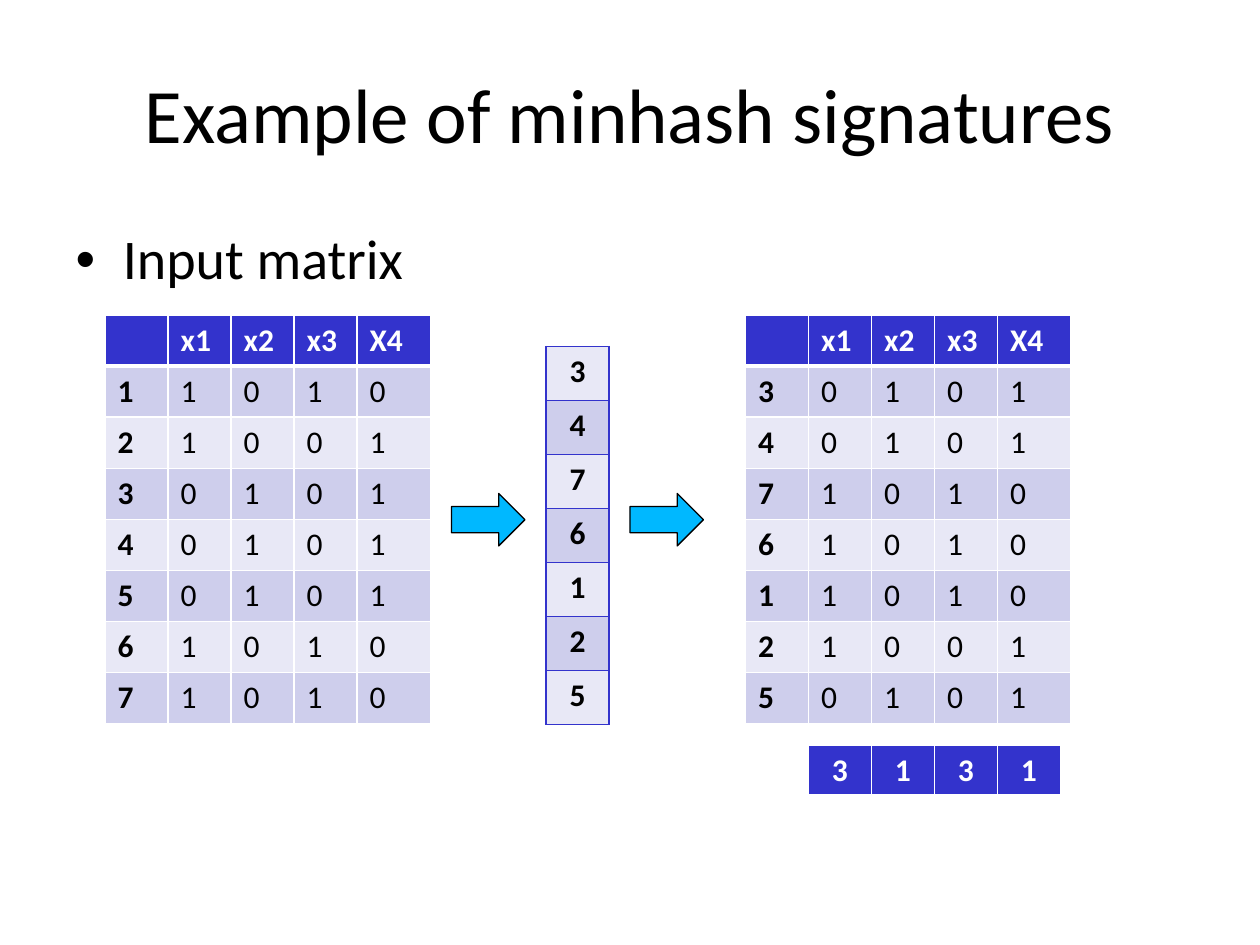
from dataclasses import dataclass

from lxml import etree
from pptx import Presentation
from pptx.dml.color import RGBColor as Rgb
from pptx.enum import shapes, text
from pptx.oxml import ns
from pptx.util import Pt


@dataclass(frozen=True)
class Theme:
    font: str = "Calibri"
    title: int = 44
    body: int = 32
    cell: int = 18
    black: str = "000000"
    white: str = "FFFFFF"
    head: str = "3333CC"
    dark: str = "CECEEC"
    light: str = "E8E8F6"
    arrow: str = "00B8FF"


THEME = Theme()
NAMES = ["x1", "x2", "x3", "X4"]
MATRIX = {
    1: (1, 0, 1, 0),
    2: (1, 0, 0, 1),
    3: (0, 1, 0, 1),
    4: (0, 1, 0, 1),
    5: (0, 1, 0, 1),
    6: (1, 0, 1, 0),
    7: (1, 0, 1, 0),
}
ORDER = [3, 4, 7, 6, 1, 2, 5]
COL, LAST, ROW = 36, 42, 29.2


def style(para, size, color=THEME.black, bold=False, align=None):
    para.alignment = align
    for run in para.runs:
        font = run.font
        font.name, font.size, font.bold = THEME.font, Pt(size), bold
        font.color.rgb = Rgb.from_string(color)


def place(item, box):
    item.left, item.top, item.width, item.height = map(Pt, box)


def add_text(holder, box, words, size, align):
    place(holder, box)
    frame = holder.text_frame
    frame.text = words
    para = frame.paragraphs[0]
    para.line_spacing = 0.98
    style(para, size, align=align)
    return para


def edge(cell, side, color, width):
    line = etree.SubElement(cell._tc.get_or_add_tcPr(), ns.qn(f"a:ln{side}"),
                            w=str(Pt(width)))
    fill = etree.SubElement(line, ns.qn("a:solidFill"))
    etree.SubElement(fill, ns.qn("a:srgbClr"), val=color)


def paint(cell, value, fill, color, bold, align, rule, top=1, base=1):
    """Fill one cell and draw its four edges."""
    for side, width in zip("LRTB", (1, 1, top, base)):
        edge(cell, side, rule, width)
    cell.fill.solid()
    cell.fill.fore_color.rgb = Rgb.from_string(fill)
    cell.text_frame.text = str(value)
    style(cell.text_frame.paragraphs[0], THEME.cell, color, bold, align)


def add_grid(slide, box, rows, cols):
    grid = slide.shapes.add_table(rows, len(cols), *map(Pt, box)).table
    grid.first_row = grid.horz_banding = False
    for col, width in zip(grid.columns, cols):
        col.width = Pt(width)
    for row in grid.rows:
        row.height = Pt(box[3] / rows)
    return grid


def add_matrix(slide, left, top, order):
    """Header row, then the matrix rows in the given order."""
    rows = [["", *NAMES]] + [[key, *MATRIX[key]] for key in order]
    cols = [COL] * len(NAMES) + [LAST]
    grid = add_grid(slide, (left, top, sum(cols), ROW * len(rows)),
                    len(rows), cols)
    for r, row in enumerate(rows):
        head = r == 0
        fill = THEME.head if head else (THEME.light, THEME.dark)[r % 2]
        for c, value in enumerate(row):
            paint(grid.cell(r, c), value, fill,
                  THEME.white if head else THEME.black, head or c == 0,
                  None, THEME.white, 3 if r == 1 else 1, 3 if head else 1)


def add_order(slide, box):
    """One column that shows the row permutation."""
    grid = add_grid(slide, box, len(ORDER), [box[2]])
    for r, key in enumerate(ORDER):
        paint(grid.cell(r, 0), key, (THEME.light, THEME.dark)[r % 2],
              THEME.black, True, text.PP_ALIGN.CENTER, THEME.head)


def add_marks(slide, left, top):
    """Signature: position of the first 1 in each permuted column."""
    count = len(NAMES)
    grid = add_grid(slide, (left, top, COL * count, ROW), 1, [COL] * count)
    for c in range(count):
        first = [MATRIX[key][c] for key in ORDER].index(1) + 1
        paint(grid.cell(0, c), first, THEME.head, THEME.white, True,
              text.PP_ALIGN.CENTER, THEME.white, base=3)


def add_arrow(slide, box):
    arrow = slide.shapes.add_shape(shapes.MSO_SHAPE.RIGHT_ARROW, *map(Pt, box))
    arrow.shadow.inherit = False
    arrow.fill.solid()
    arrow.fill.fore_color.rgb = Rgb.from_string(THEME.arrow)
    arrow.line.color.rgb = Rgb.from_string(THEME.black)
    arrow.line.width = Pt(0.75)


def main():
    deck = Presentation()
    deck.slide_width, deck.slide_height = Pt(720), Pt(540)
    slide = deck.slides.add_slide(deck.slide_layouts[1])

    # Title and list
    title, body = slide.placeholders
    add_text(title, (36, 10, 648, 113), "Example of minhash signatures",
             THEME.title, text.PP_ALIGN.CENTER)
    item = add_text(body, (36, 126, 648, 356.4), "Input matrix",
                    THEME.body, None)
    item.space_before = Pt(8)

    # Input matrix, permutation and permuted matrix
    add_matrix(slide, 60, 180, sorted(MATRIX))
    add_order(slide, (312, 198, COL, 216))
    for left in (258, 360):
        add_arrow(slide, (left, 282, 42, 30))
    add_matrix(slide, 426, 180, ORDER)

    # Signature row, under the value columns
    add_marks(slide, 426 + COL, 426)
    deck.save("out.pptx")


if __name__ == "__main__":
    main()
